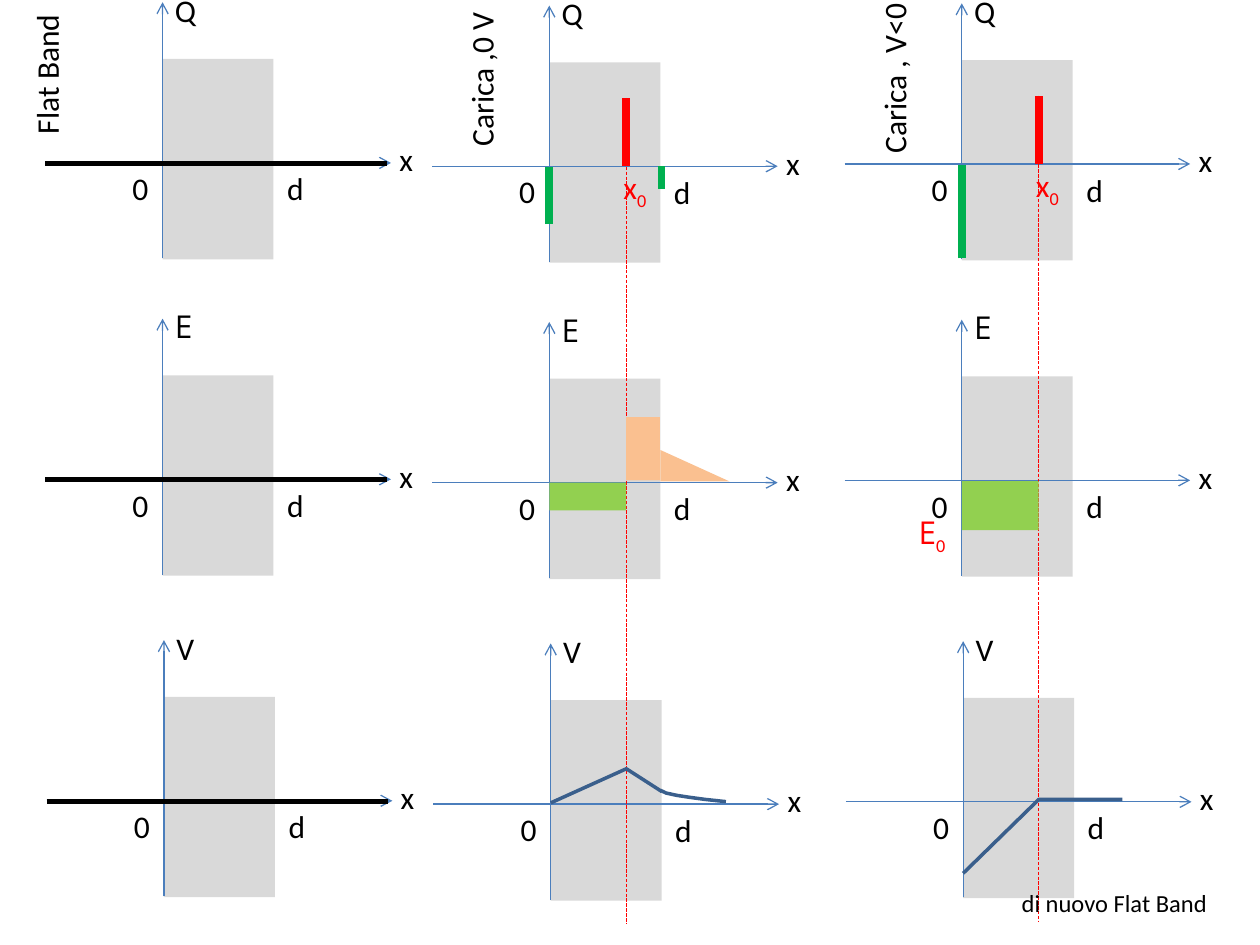
from dataclasses import dataclass
from typing import Any

from lxml import etree
from pptx import Presentation
from pptx.dml import color
from pptx.enum import dml, shapes, text
from pptx.oxml import ns
from pptx.util import Pt

COLORS = {
    "oxide": "D9D9D9", "axis": "4B7EBC", "ink": "000000", "trapped": "FF0000",
    "induced": "00B050", "negative": "92D050", "positive": "FAC090",
    "potential": "3A5F8C",
}
LABEL_FRAME = {"word_wrap": False, "auto_size": text.MSO_AUTO_SIZE.SHAPE_TO_FIT_TEXT}
BODY_FONT = "Calibri"
FIELD_FONT = "Open Sans"
LABEL_HEIGHT = 29
OXIDE_WIDTH, OXIDE_HEIGHT, OXIDE_RISE = 63.4, 114.5, 59.4
CHARGE_X = 43.9
Point = tuple[float, float]


@dataclass(frozen=True)
class Label:
    words: str
    left: float
    top: float
    width: float
    subscript: str = ""
    font: str = BODY_FONT
    tone: str = "ink"
    size: float = 18
    height: float = LABEL_HEIGHT
    rotation: float = 0


@dataclass(frozen=True)
class Stroke:
    start: Point
    end: Point
    tone: str
    weight: float
    arrow: bool = False
    dashed: bool = False


@dataclass(frozen=True)
class Area:
    left: float
    top: float
    width: float
    height: float
    tone: str
    kind: Any = shapes.MSO_SHAPE.RECTANGLE


@dataclass(frozen=True)
class Curve:
    points: tuple[Point, ...]


@dataclass(frozen=True)
class Row:
    quantity: str
    width: float
    font: str
    shift: float
    axis_y: float


@dataclass(frozen=True)
class State:
    caption: Label
    x: float
    drop: float
    marks: dict[str, list[Any]]


def rgb(tone: str) -> color.RGBColor:
    return color.RGBColor.from_string(COLORS[tone])


def apply(target: Any, values: dict[str, Any]) -> None:
    for key, value in values.items():
        setattr(target, key, value)


def draw_label(canvas: Any, label: Label, x: float, y: float) -> None:
    box = canvas.add_textbox(Pt(x + label.left), Pt(y + label.top),
                             Pt(label.width), Pt(label.height))
    box.rotation = label.rotation
    apply(box.text_frame, LABEL_FRAME)
    paragraph = box.text_frame.paragraphs[0]
    for words, font, baseline in ((label.words, label.font, None),
                                  (label.subscript, BODY_FONT, "-25000")):
        if not words:
            continue
        run = paragraph.add_run()
        run.text = words
        apply(run.font, {"name": font, "size": Pt(label.size)})
        run.font.color.rgb = rgb(label.tone)
        if baseline:
            run._r.get_or_add_rPr().set("baseline", baseline)


def draw_stroke(canvas: Any, stroke: Stroke, x: float, y: float) -> None:
    (x1, y1), (x2, y2) = stroke.start, stroke.end
    connector = canvas.add_connector(shapes.MSO_CONNECTOR.STRAIGHT, Pt(x + x1),
                                     Pt(y + y1), Pt(x + x2), Pt(y + y2))
    connector.line.color.rgb = rgb(stroke.tone)
    connector.line.width = Pt(stroke.weight)
    if stroke.dashed:
        connector.line.dash_style = dml.MSO_LINE.LONG_DASH
    if stroke.arrow:
        outline = connector.line._get_or_add_ln()
        etree.SubElement(outline, ns.qn("a:tailEnd")).set("type", "arrow")
    etree.SubElement(connector._element.spPr, ns.qn("a:effectLst"))


def draw_area(canvas: Any, area: Area, x: float, y: float) -> None:
    block = canvas.add_shape(area.kind, Pt(x + area.left), Pt(y + area.top),
                             Pt(area.width), Pt(area.height))
    block.shadow.inherit = False
    block.fill.solid()
    block.fill.fore_color.rgb = rgb(area.tone)
    block.line.fill.background()
    if area.kind == shapes.MSO_SHAPE.ISOSCELES_TRIANGLE:
        block.adjustments[0] = 0


def draw_curve(canvas: Any, curve: Curve, x: float, y: float) -> None:
    places = [(Pt(x + dx), Pt(y + dy)) for dx, dy in curve.points]
    builder = canvas.build_freeform(*places[0])
    builder.add_line_segments(places[1:], close=False)
    profile = builder.convert_to_shape()
    profile.shadow.inherit = False
    profile.fill.background()
    profile.line.color.rgb = rgb("potential")
    profile.line.width = Pt(2)


DRAW = {Label: draw_label, Stroke: draw_stroke, Area: draw_area, Curve: draw_curve}


def axes(row: Row) -> list[Any]:
    return [
        Area(0, -OXIDE_RISE, OXIDE_WIDTH, OXIDE_HEIGHT, "oxide"),
        Stroke((-67, 0), (130.5, 0), "axis", 0.75, arrow=True),
        Stroke((0, 54.6), (0, -91.8), "axis", 0.75, arrow=True),
        Label(row.quantity, 0, -101.8, row.width, font=row.font),
        Label("x", 128.2, -16.5, 22.3),
        Label("d", 64.1, 0.2, 24.5),
        Label("0", -24.3, 0, 24.5),
    ]


def caption(words: str, left: float, top: float, width: float) -> Label:
    return Label(words, left, top, width, rotation=270)


def trapped_charge() -> list[Any]:
    return [
        Stroke((CHARGE_X, 0), (CHARGE_X, -39), "trapped", 4.5),
        Label("x", 35.3, -2.4, 28.8, subscript="0", tone="trapped"),
        Stroke((CHARGE_X, -39), (CHARGE_X, 432.7), "trapped", 0.25, dashed=True),
    ]


ROWS = [
    Row("Q", 26.6, BODY_FONT, 0, 93.1),
    Row("E", 28.1, FIELD_FONT, 0, 273.9),
    Row("V", 25.2, BODY_FONT, 0.8, 457.6),
]
FLAT = [Stroke((-67, 0.2), (128, 0.2), "ink", 3)]
STATES = [
    State(caption("Flat Band", -15.1, 27.4, 83.5), 92.9, 0,
          {row.quantity: FLAT for row in ROWS}),
    State(caption("Carica ,0 V", 229, 30.2, 92.2), 313.9, 1.9, {
        "Q": trapped_charge() + [
            Stroke((0, 33.1), (0, 0.7), "induced", 4.5),
            Stroke((64.1, 13), (64.1, 0), "induced", 4.5)],
        "E": [Area(0, 0, CHARGE_X, 15.8, "negative"),
              Area(CHARGE_X, -37.4, 19.4, 36.2, "positive"),
              Area(63.4, -18.7, 39.6, 18, "positive",
                   shapes.MSO_SHAPE.ISOSCELES_TRIANGLE)],
        "V": [Curve(((0, -0.7), (43.2, -20.2), (63.4, -7.2))),
              Curve(((62.6, -7.9), (66, -6.3), (72, -5), (79, -3.9),
                     (88, -2.7), (100.1, -1.4)))],
    }),
    State(caption("Carica , V<0", 460.1, 29.5, 101.5), 549.6, 0.6, {
        "Q": trapped_charge() + [Stroke((0, 54), (0, 0.7), "induced", 4.5)],
        "E": [Area(0, 0.4, CHARGE_X, 28.1, "negative"),
              Label("E", -31.7, 15, 33.8, "0", FIELD_FONT, "trapped")],
        "V": [Curve(((0, 40.8), (43.2, -1.4), (90.9, -1.4)))],
    }),
]


def main() -> None:
    deck = Presentation()
    apply(deck, {"slide_width": Pt(720), "slide_height": Pt(540)})
    slide = deck.slides.add_slide(deck.slide_layouts.get_by_name("Blank"))
    for state in STATES:
        canvas = slide.shapes.add_group_shape().shapes
        for pick in (axes, lambda row: state.marks[row.quantity]):
            for row in ROWS:
                for part in pick(row):
                    DRAW[type(part)](canvas, part, state.x + row.shift,
                                     row.axis_y + state.drop)
        draw_label(canvas, state.caption, 0, 0)
    draw_label(slide.shapes, Label("di nuovo Flat Band", 576.7, 504, 121.7,
                                   size=14, height=24.5), 0, 0)
    deck.save("out.pptx")


if __name__ == "__main__":
    main()
